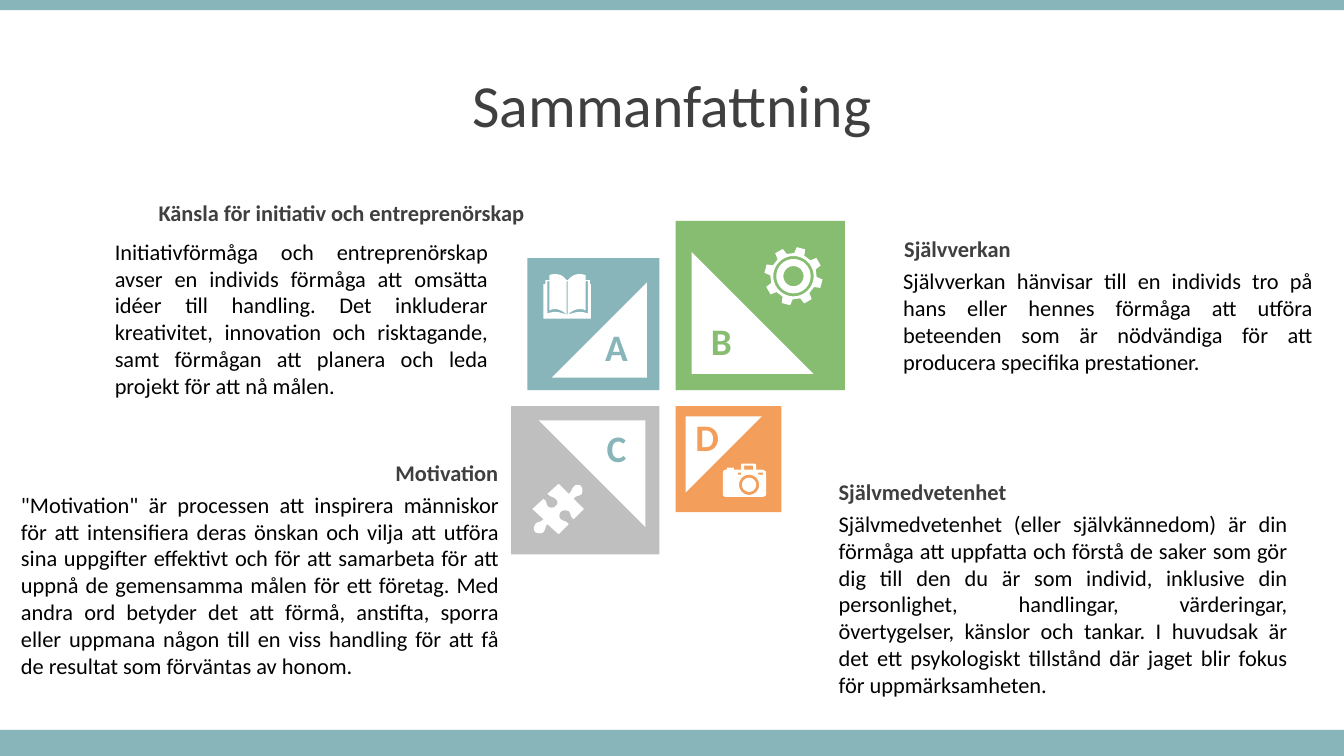
import math

from pptx import Presentation
from pptx import util as u
from pptx.dml.color import RGBColor
from pptx.enum import shapes, text

TEAL, GREEN, ORANGE, GREY = "87B5BA", "86BD70", "F39E5A", "BFBFBF"
WHITE, DARK, BLACK = "FFFFFF", "3F3F3F", "000000"
LEFT, RIGHT = text.PP_ALIGN.LEFT, text.PP_ALIGN.RIGHT
CENTER, JUSTIFY = text.PP_ALIGN.CENTER, text.PP_ALIGN.JUSTIFY

prs = Presentation()
prs.slide_width, prs.slide_height = u.Inches(13.33), u.Inches(7.5)
slide = prs.slides.add_slide(prs.slide_layouts[5])


def paint(shape, colour):
    """Give a shape a plain fill without line or shadow."""
    shape.fill.solid()
    shape.fill.fore_color.rgb = RGBColor.from_string(colour)
    shape.line.fill.background()
    shape.shadow.inherit = False


def write(box, words, size, colour, align, bold=False):
    box.text_frame.word_wrap = True
    box.text_frame.text = words
    paragraph = box.text_frame.paragraphs[0]
    paragraph.alignment = align
    font = paragraph.runs[0].font
    font.name, font.size, font.bold = "Calibri", u.Pt(size), bold
    font.color.rgb = RGBColor.from_string(colour)


# Bands at the bottom and top edges
for top, height in [(7.24, 0.26), (0, 0.1)]:
    band = slide.shapes.add_shape(shapes.MSO_SHAPE.RECTANGLE, 0, u.Inches(top),
                                  prs.slide_width, u.Inches(height))
    paint(band, TEAL)

title = slide.shapes.title
title.left, title.top = 0, u.Inches(0.65)
title.width, title.height = prs.slide_width, u.Inches(0.84)
title.text_frame.vertical_anchor = text.MSO_ANCHOR.MIDDLE
write(title, "Sammanfattning", 42.7, DARK, CENTER)
title.text_frame.paragraphs[0].line_spacing = 0.9

# Four squares meet at a cross; each triangle sits a tenth inside its inner corner
WEST, EAST, NORTH, SOUTH = 6.54, 6.7, 3.87, 4.03
tiles = [
    # letter, size, inner corner, fill, letter colour, triangle turn, letter place
    ("A", 1.31, WEST, NORTH, TEAL, TEAL, 270, 5.82, 3.17),
    ("B", 1.68, EAST, NORTH, GREEN, GREEN, 0, 6.86, 3.11),
    ("C", 1.47, WEST, SOUTH, GREY, TEAL, 180, 5.82, 4.17),
    ("D", 1.05, EAST, SOUTH, ORANGE, ORANGE, 90, 6.72, 4.06),
]
for letter, size, x, y, fill, ink, turn, letter_x, letter_y in tiles:
    for kind, side, inset, colour, angle in [
        (shapes.MSO_SHAPE.RECTANGLE, size, 0, fill, 0),
        (shapes.MSO_SHAPE.RIGHT_TRIANGLE, 0.72 * size, 0.095 * size, WHITE, turn),
    ]:
        left = x - inset - side if x == WEST else x + inset
        top = y - inset - side if y == NORTH else y + inset
        part = slide.shapes.add_shape(kind, u.Inches(left), u.Inches(top),
                                      u.Inches(side), u.Inches(side))
        part.rotation = angle
        paint(part, colour)
    label = slide.shapes.add_textbox(u.Inches(letter_x), u.Inches(letter_y),
                                     u.Inches(0.59), u.Inches(0.55))
    write(label, letter, 26.7, ink, CENTER, True)

# Outlines in inches: a pair is a corner, six numbers are a Bézier curve
book = [
    [(5.39, 3.16), (5.39, 2.82), (5.41, 2.82), (5.41, 2.78), (5.45, 2.78),
     (5.45, 2.73), (5.47, 2.72, 5.5, 2.72, 5.51, 2.72),
     (5.56, 2.72, 5.59, 2.74, 5.62, 2.78), (5.63, 2.78),
     (5.67, 2.74, 5.7, 2.72, 5.74, 2.72), (5.76, 2.72, 5.78, 2.72, 5.81, 2.73),
     (5.81, 2.78), (5.85, 2.78), (5.85, 2.82), (5.86, 2.82), (5.86, 3.16)],
    [(5.62, 3.12), (5.57, 3.07, 5.5, 3.05, 5.45, 3.08), (5.45, 2.79), (5.43, 2.79),
     (5.43, 3.11), (5.51, 3.08, 5.55, 3.1, 5.62, 3.12)],
    [(5.63, 3.12), (5.71, 3.1, 5.75, 3.08, 5.83, 3.11), (5.83, 2.79), (5.81, 2.79),
     (5.81, 3.08), (5.75, 3.05, 5.69, 3.07, 5.63, 3.12)],
    [(5.62, 2.79), (5.63, 2.79), (5.63, 3.12), (5.62, 3.12)],
]
puzzle = [[
    (5.76, 4.82), (5.78, 4.84, 5.78, 4.87, 5.77, 4.9),
    (5.74, 4.93, 5.71, 4.91, 5.69, 4.95), (5.79, 5.05), (5.69, 5.15),
    (5.65, 5.13, 5.67, 5.1, 5.64, 5.07), (5.61, 5.06, 5.58, 5.06, 5.56, 5.08),
    (5.55, 5.09, 5.54, 5.13, 5.56, 5.15), (5.6, 5.18, 5.61, 5.16, 5.64, 5.2),
    (5.54, 5.3), (5.43, 5.2), (5.4, 5.23, 5.42, 5.24, 5.39, 5.28),
    (5.36, 5.3, 5.33, 5.29, 5.31, 5.28), (5.29, 5.26, 5.29, 5.23, 5.31, 5.2),
    (5.33, 5.17, 5.36, 5.19, 5.39, 5.15), (5.28, 5.05), (5.39, 4.95),
    (5.43, 4.97, 5.41, 5, 5.44, 5.03), (5.46, 5.04, 5.5, 5.04, 5.51, 5.02),
    (5.53, 5.01, 5.54, 4.97, 5.51, 4.95), (5.48, 4.92, 5.47, 4.94, 5.43, 4.9),
    (5.54, 4.8), (5.64, 4.9), (5.68, 4.87, 5.66, 4.86, 5.69, 4.83),
    (5.71, 4.8, 5.75, 4.81, 5.76, 4.82),
]]
camera = [[
    (7.36, 4.6), (7.49, 4.6), (7.5, 4.61), (7.5, 4.66), (7.56, 4.66),
    (7.58, 4.66, 7.6, 4.68, 7.6, 4.69), (7.6, 4.9),
    (7.6, 4.92, 7.58, 4.93, 7.56, 4.93), (7.2, 4.93),
    (7.18, 4.93, 7.17, 4.92, 7.17, 4.9), (7.17, 4.69),
    (7.17, 4.68, 7.18, 4.66, 7.2, 4.66), (7.21, 4.66), (7.21, 4.64),
    (7.28, 4.64), (7.28, 4.66), (7.35, 4.66), (7.35, 4.61),
]]
for x1, y1, x2, y2 in [(7.32, 4.69, 7.35, 4.71), (7.52, 4.69, 7.57, 4.71),
                       (7.38, 4.62, 7.47, 4.66)]:
    camera.append([(x1, y1), (x2, y1), (x2, y2), (x1, y2)])

gear_x, gear_y = 7.87, 2.74
gear = [[]]
for tooth in range(8):
    for radius, swing in [(0.23, -13), (0.29, -8.5), (0.29, 8.5), (0.23, 13)]:
        angle = math.radians(45 * tooth - 75 + swing)
        gear[0].append((gear_x + radius * math.cos(angle),
                        gear_y + radius * math.sin(angle)))

# Nested rings alternate between hole and fill
for icon, x, y, radii in [(gear, gear_x, gear_y, (0.2, 0.17, 0.1)),
                          (camera, 7.43, 4.81, (0.1, 0.07))]:
    for radius in radii:
        icon.append([(x + radius * math.cos(math.tau * step / 40),
                      y + radius * math.sin(math.tau * step / 40))
                     for step in range(40)])

for icon in (book, puzzle, gear, camera):
    builder = None
    for contour in icon:
        points = []
        for node in contour:
            if len(node) == 2:
                points.append(node)
                continue
            controls = [points[-1], node[:2], node[2:4], node[4:]]
            for step in range(1, 9):
                t = step / 8
                weights = [math.comb(3, i) * t**i * (1 - t)**(3 - i) for i in range(4)]
                points.append(tuple(sum(w * c[axis] for w, c in zip(weights, controls))
                                    for axis in (0, 1)))
        points = [(1000 * x, 1000 * y) for x, y in points]
        if builder is None:
            builder = slide.shapes.build_freeform(*points[0], scale=u.Inches(1) / 1000)
        else:
            builder.move_to(*points[0])
        builder.add_line_segments(points[1:], close=True)
    paint(builder.convert_to_shape(), WHITE)

# Headings, then explanations
passages = [
    (0.99, 2.25, 3.55, 0.37, RIGHT, "."),
    (0.55, 1.93, 4.75, 0.37, RIGHT, "Känsla för initiativ och entreprenörskap"),
    (1.34, 4.51, 3.7, 0.37, RIGHT, "Motivation"),
    (8.87, 2.28, 3.7, 0.37, LEFT, "Självverkan"),
    (8.22, 4.69, 3.7, 0.37, LEFT, "Självmedvetenhet"),
    (1.04, 2.31, 3.9, 1.72, JUSTIFY,
     "Initiativförmåga och entreprenörskap avser en individs förmåga att omsätta idéer "
     "till handling. Det inkluderar kreativitet, innovation och risktagande, samt "
     "förmågan att planera och leda projekt för att nå målen."),
    (8.86, 2.6, 4.26, 1.18, JUSTIFY,
     "Självverkan hänvisar till en individs tro på hans eller hennes förmåga att utföra "
     "beteenden som är nödvändiga för att producera specifika prestationer."),
    (8.22, 5.01, 4.65, 1.99, JUSTIFY,
     "Självmedvetenhet (eller självkännedom) är din förmåga att uppfatta och förstå de "
     "saker som gör dig till den du är som individ, inklusive din personlighet, "
     "handlingar, värderingar, övertygelser, känslor och tankar. I huvudsak är det ett "
     "psykologiskt tillstånd där jaget blir fokus för uppmärksamheten."),
    (0.11, 4.82, 4.94, 1.99, JUSTIFY,
     '"Motivation" är processen att inspirera människor för att intensifiera deras '
     "önskan och vilja att utföra sina uppgifter effektivt och för att samarbeta för att "
     "uppnå de gemensamma målen för ett företag. Med andra ord betyder det att förmå, "
     "anstifta, sporra eller uppmana någon till en viss handling för att få de resultat "
     "som förväntas av honom."),
]
for left, top, width, height, align, words in passages:
    box = slide.shapes.add_textbox(u.Inches(left), u.Inches(top),
                                   u.Inches(width), u.Inches(height))
    heading = align != JUSTIFY
    write(box, words, 16, DARK if heading else BLACK, align, heading and words != ".")

prs.save("out.pptx")
